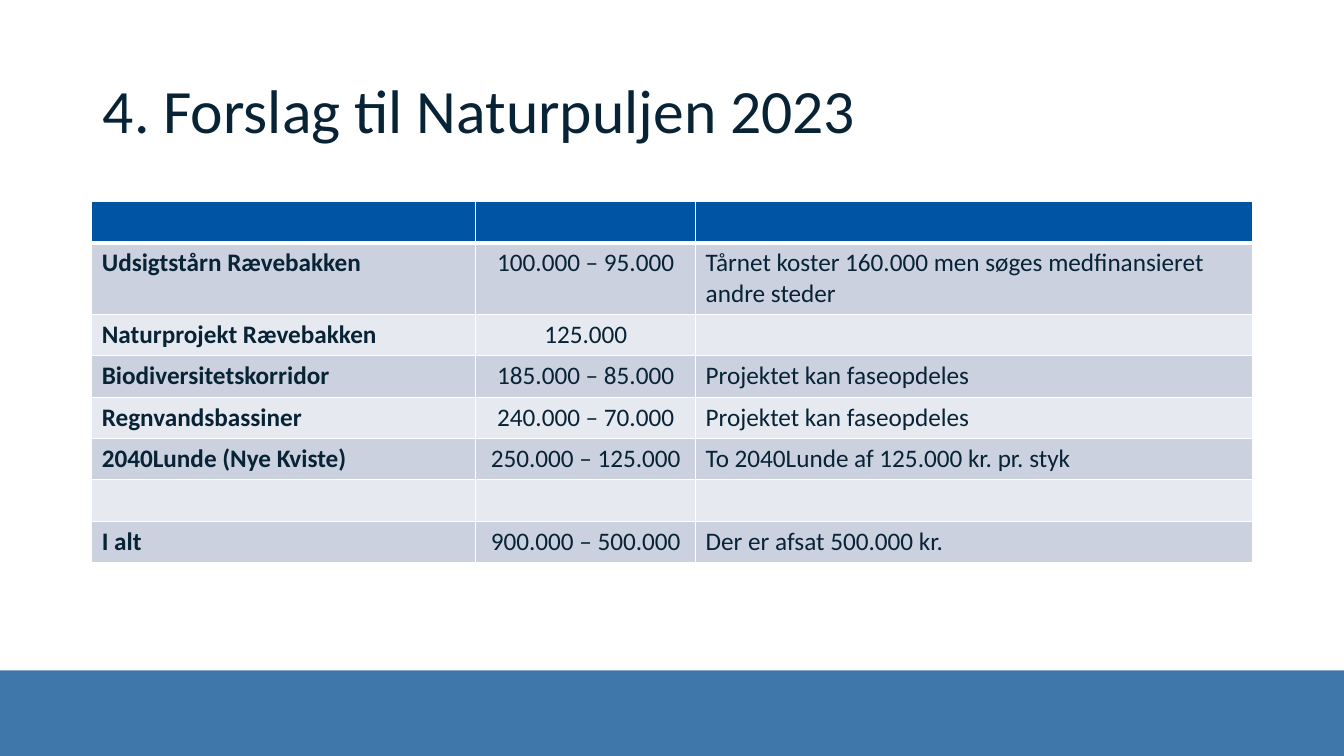
from lxml.etree import SubElement
from pptx import Presentation
from pptx.dml.color import RGBColor
from pptx.enum.shapes import MSO_SHAPE
from pptx.enum.text import MSO_ANCHOR, PP_ALIGN
from pptx.oxml.ns import qn
from pptx.util import Inches, Pt

FONT = "Calibri"
TEXT = RGBColor(0x07, 0x23, 0x35)
WHITE = RGBColor(0xFF, 0xFF, 0xFF)
HEADER = RGBColor(0x00, 0x54, 0xA4)
BAND_DARK = RGBColor(0xCC, 0xD1, 0xE0)
BAND_LIGHT = RGBColor(0xE7, 0xE9, 0xF0)
FOOTER = RGBColor(0x00, 0x4A, 0x8E)

COLUMN_WIDTHS = (3.81, 2.18, 5.52)
ROW_HEIGHT = 0.41
TWO_LINE_HEIGHT = 0.7
TWO_LINE_ROW = 1
ROWS = (
    ("", "", ""),
    ("Udsigtstårn Rævebakken", "100.000 – 95.000",
     "Tårnet koster 160.000 men søges medfinansieret andre steder"),
    ("Naturprojekt Rævebakken", "125.000", ""),
    ("Biodiversitetskorridor", "185.000 – 85.000", "Projektet kan faseopdeles"),
    ("Regnvandsbassiner", "240.000 – 70.000", "Projektet kan faseopdeles"),
    ("2040Lunde (Nye Kviste)", "250.000 – 125.000",
     "To 2040Lunde af 125.000 kr. pr. styk"),
    ("", "", ""),
    ("I alt", "900.000 – 500.000", "Der er afsat 500.000 kr."),
)


def format_font(font, size, bold=False):
    font.name = FONT
    font.size = Pt(size)
    font.bold = bold
    font.color.rgb = TEXT


def add_footer_band(slide):
    band = slide.shapes.add_shape(
        MSO_SHAPE.RECTANGLE, 0, Inches(6.65), Inches(13.33), Inches(0.85))
    band.shadow.inherit = False
    band.line.fill.background()
    band.fill.solid()
    band.fill.fore_color.rgb = FOOTER
    color = band.fill._xPr.find(qn("a:solidFill"))[0]
    SubElement(color, qn("a:alpha"), val="75000")


def set_title(slide, text):
    title = slide.shapes.title
    title.left, title.top = Inches(0.92), Inches(0.4)
    title.width, title.height = Inches(11.5), Inches(1.45)
    title.text_frame.text = text
    title.text_frame.vertical_anchor = MSO_ANCHOR.MIDDLE
    paragraph = title.text_frame.paragraphs[0]
    paragraph.alignment = PP_ALIGN.LEFT
    paragraph.line_spacing = 0.9
    format_font(paragraph.runs[0].font, 44)


def set_borders(cell, bottom_width):
    """Draw white cell borders; they must precede the fill in the XML."""
    properties = cell._tc.get_or_add_tcPr()
    widths = {"a:lnL": 1, "a:lnR": 1, "a:lnT": 1, "a:lnB": bottom_width}
    for tag, width in widths.items():
        line = SubElement(properties, qn(tag), w=str(Pt(width)))
        fill = SubElement(line, qn("a:solidFill"))
        SubElement(fill, qn("a:srgbClr"), val=str(WHITE))


def fill_cell(cell, text, row_index, column_index):
    is_header = row_index == 0
    set_borders(cell, 3 if is_header else 1)
    cell.fill.solid()
    band_color = BAND_DARK if row_index % 2 else BAND_LIGHT
    cell.fill.fore_color.rgb = HEADER if is_header else band_color
    if text:
        cell.text_frame.text = text
        paragraph = cell.text_frame.paragraphs[0]
        paragraph.alignment = PP_ALIGN.CENTER if column_index == 1 else PP_ALIGN.LEFT
        format_font(paragraph.runs[0].font, 18, bold=column_index == 0)


def add_budget_table(slide):
    height = ROW_HEIGHT * (len(ROWS) - 1) + TWO_LINE_HEIGHT
    table = slide.shapes.add_table(
        len(ROWS), len(COLUMN_WIDTHS), Inches(0.91), Inches(2),
        Inches(sum(COLUMN_WIDTHS)), Inches(height)).table
    for column, width in zip(table.columns, COLUMN_WIDTHS):
        column.width = Inches(width)
    for row_index, texts in enumerate(ROWS):
        row_height = TWO_LINE_HEIGHT if row_index == TWO_LINE_ROW else ROW_HEIGHT
        table.rows[row_index].height = Inches(row_height)
        for column_index, text in enumerate(texts):
            fill_cell(table.cell(row_index, column_index), text, row_index, column_index)


def main():
    presentation = Presentation()
    presentation.slide_width = Inches(13.33)
    presentation.slide_height = Inches(7.5)
    slide = presentation.slides.add_slide(presentation.slide_layouts[5])
    add_footer_band(slide)
    set_title(slide, "4. Forslag til Naturpuljen 2023")
    add_budget_table(slide)
    presentation.save("out.pptx")


if __name__ == "__main__":
    main()
